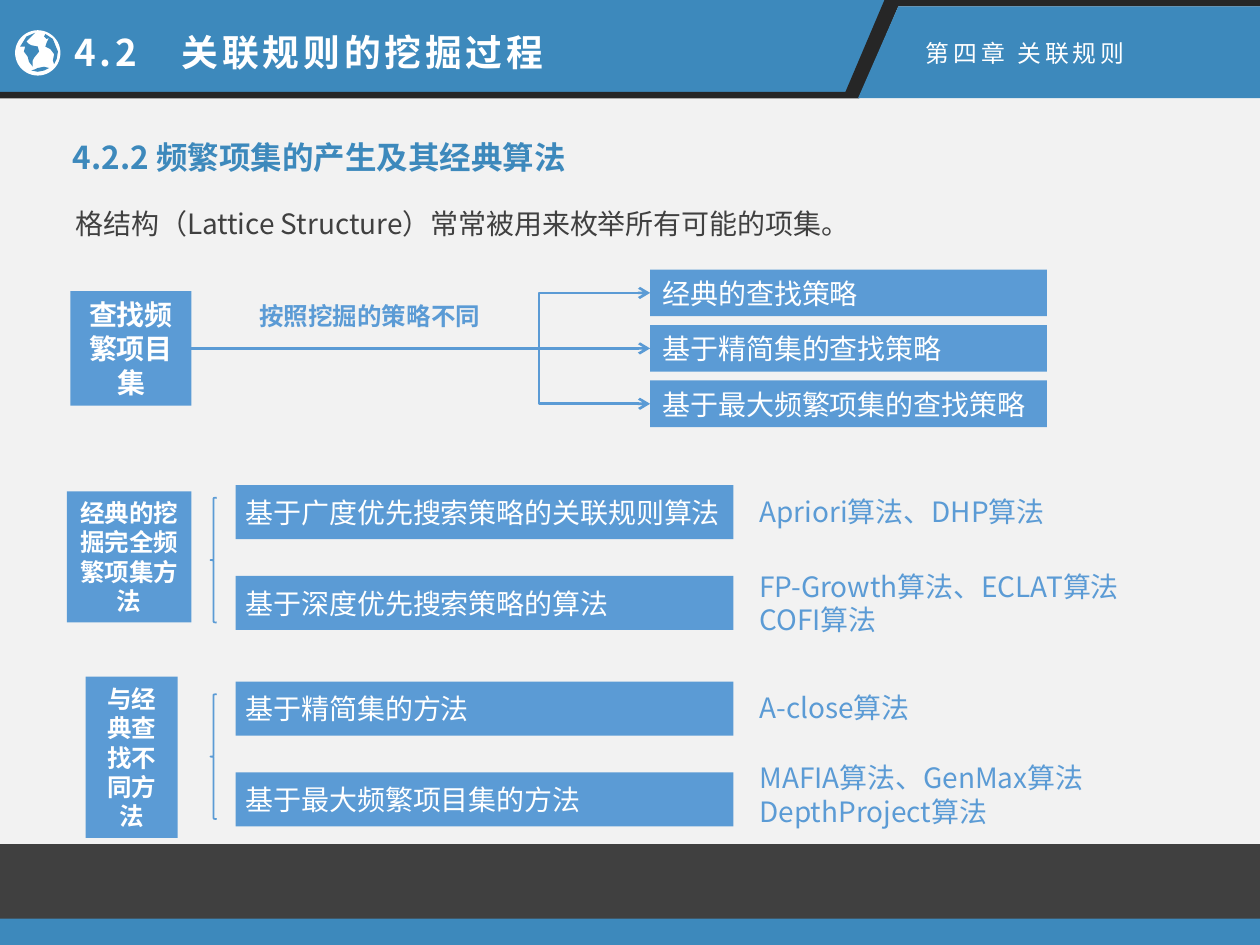
from lxml.etree import SubElement
from pptx import Presentation
from pptx.dml.color import RGBColor
from pptx.enum.shapes import MSO_CONNECTOR as CONN, MSO_SHAPE as SHAPE
from pptx.enum.text import MSO_ANCHOR as ANCHOR, PP_ALIGN as ALIGN
from pptx.oxml.ns import qn
from pptx.util import Inches, Pt

# Grid: 100 columns by 75 rows; outlines use a ten times finer mesh
W, H = Inches(10), Inches(7.5)
COL, ROW = W / 100, H / 75
FINE = COL / 10

HEAD = RGBColor(0x3D, 0x89, 0xBC)
BLUE = RGBColor(0x5B, 0x9B, 0xD5)
DARK = RGBColor(0x40, 0x40, 0x40)
BLACK = RGBColor(0x26, 0x26, 0x26)
WHITE = RGBColor(0xFF, 0xFF, 0xFF)
PAPER = RGBColor(0xF2, 0xF2, 0xF2)
FONT = "Noto Sans CJK SC"

# Text formats
TITLE = dict(size=Pt(21), bold=True)
CHAPTER = dict(size=Pt(13.6))
SECTION = dict(size=Pt(18), bold=True)
BODY = dict(size=Pt(16))
BODY_BOLD = dict(size=Pt(16), bold=True)
SMALL_BOLD = dict(size=Pt(14), bold=True)


def cells(x, y, w, h):
    return [round(v * u) for v, u in zip((x, y, w, h), (COL, ROW, COL, ROW))]


def paint(sp, color):
    sp.shadow.inherit = False
    sp.fill.solid()
    sp.fill.fore_color.rgb = color
    sp.line.fill.background()
    return sp


def write(tf, text, color, fmt, align=ALIGN.LEFT, spacing=None):
    for i, line in enumerate(text.split("\n")):
        p = tf.paragraphs[0] if i == 0 else tf.add_paragraph()
        p.alignment = align
        r = p.add_run()
        r.text = line
        for name, value in dict(fmt, name=FONT).items():
            setattr(r.font, name, value)
        r.font.color.rgb = color
        rpr = r.font._element
        SubElement(rpr, qn("a:ea")).set("typeface", FONT)
        if spacing:
            rpr.set("spc", str(spacing))


def add_block(s, at, color, kind=SHAPE.RECTANGLE):
    return paint(s.shapes.add_shape(kind, *cells(*at)), color)


def add_box(s, at, text, fmt=BODY, align=ALIGN.LEFT, inset=1):
    sp = add_block(s, at, BLUE)
    tf = sp.text_frame
    tf.word_wrap = True
    tf.vertical_anchor = ANCHOR.MIDDLE
    tf.margin_left = tf.margin_right = round(inset * COL)
    write(tf, text, WHITE, fmt, align)
    return sp


def add_label(s, at, text, color=BLUE, fmt=BODY, wrap=True, spacing=None):
    tf = s.shapes.add_textbox(*cells(*at)).text_frame
    tf.word_wrap = wrap
    write(tf, text, color, fmt, spacing=spacing)
    return tf


def add_outline(s, points, color):
    fb = s.shapes.build_freeform(*points[0], scale=FINE)
    fb.add_line_segments(points[1:], close=True)
    return paint(fb.convert_to_shape(), color)


def add_arrow(s, start, end, kind):
    cx = s.shapes.add_connector(kind, 0, 0, 0, 0)
    cx.begin_connect(start, 3)
    cx.end_connect(end, 1)
    cx.line.color.rgb = BLUE
    cx.line.width = Pt(1.5)
    SubElement(cx.line._get_or_add_ln(), qn("a:tailEnd")).set("type", "arrow")
    sppr = cx._element.spPr
    SubElement(sppr, qn("a:effectLst"))
    if kind == CONN.ELBOW:
        guide = SubElement(sppr.find(qn("a:prstGeom")).get_or_add_avLst(), qn("a:gd"))
        guide.set("name", "adj1")
        guide.set("fmla", "val 75800")


def add_brace(s, y):
    sp = s.shapes.add_shape(SHAPE.LEFT_BRACE, *cells(16.7, y, 0.5, 9.9))
    sp.shadow.inherit = False
    sp.fill.background()
    sp.line.color.rgb = BLUE
    sp.line.width = Pt(1)


def add_globe(s):
    add_block(s, (1.2, 2.4, 3.6, 3.6), WHITE, SHAPE.OVAL)
    lands = (
        [(46, 41), (45, 47), (43, 51), (42, 48), (43, 43), (40, 39), (36, 37),
         (37, 34), (39, 30), (37, 31), (35, 29), (36, 27), (42, 31)],
        [(28, 26), (26, 28), (24, 30), (21, 33), (23, 35), (25, 36), (30, 37),
         (31, 41), (27, 46), (26, 48), (26, 53), (23, 49), (22, 45), (19, 41),
         (20, 37), (16, 37), (21, 29)],
        [(25, 56), (28, 55), (30, 54), (35, 53), (39, 54), (35, 56), (30, 57)],
    )
    for land in lands:
        add_outline(s, land, HEAD)


def add_header(s):
    add_outline(s, [(0, 0), (705, 0), (674, 73), (0, 73)], HEAD)
    add_outline(s, [(709, 0), (1000, 0), (1000, 5), (713, 5), (682, 78), (0, 78),
                    (0, 73), (671, 73), (702, 0)], BLACK)
    add_outline(s, [(713, 5), (1000, 5), (1000, 78), (681, 78)], HEAD)
    add_globe(s)
    add_label(s, (4.9, 1.9, 40.1, 8.1), "4.2　关联规则的挖掘过程", WHITE, TITLE, False, 220)
    add_label(s, (72.5, 2.6, 18.9, 8.1), "第四章 关联规则", WHITE, CHAPTER, False, 220)


def add_strategies(s):
    source = add_box(s, (5.6, 23.1, 9.6, 9.1), "查找频繁项目集", BODY_BOLD, ALIGN.CENTER)
    names = ("经典的查找策略", "基于精简集的查找策略", "基于最大频繁项集的查找策略")
    for i, name in enumerate(names):
        target = add_box(s, (51.6, 21.4 + 4.4 * i, 31.5, 3.7), name)
        add_arrow(s, source, target, CONN.STRAIGHT if i == 1 else CONN.ELBOW)
    add_label(s, (19.6, 23.4, 19.7, 3.4), "按照挖掘的策略不同", fmt=SMALL_BOLD, wrap=False)


def add_methods(s, at, heading, top, names):
    add_box(s, at, heading, SMALL_BOLD, ALIGN.CENTER)
    add_brace(s, top + 1)
    for i, name in enumerate(names):
        add_box(s, (18.7, top + 7.2 * i, 39.5, 4.3), name, inset=0.8)


def main():
    prs = Presentation()
    prs.slide_width, prs.slide_height = W, H
    s = prs.slides.add_slide(prs.slide_layouts[6])
    s.background.fill.solid()
    s.background.fill.fore_color.rgb = PAPER

    # Footer bands and header
    add_block(s, (0, 67, 100, 6), DARK)
    add_block(s, (0, 72.9, 100, 2.1), HEAD)
    add_header(s)

    # Section heading and introduction
    add_label(s, (4.8, 10.5, 88.3, 4), "4.2.2 频繁项集的产生及其经典算法", HEAD, SECTION)
    intro = add_label(s, (0, 14.6, 98.8, 4.6),
                      "格结构（Lattice Structure）常常被用来枚举所有可能的项集。", DARK)
    p = intro.paragraphs[0]
    p.line_spacing = 1.5
    p._p.get_or_add_pPr().set("indent", str(round(5 * COL)))

    # Strategy tree and the two method groups
    add_strategies(s)
    add_methods(s, (5.3, 39, 9.9, 10.4), "经典的挖掘完全频繁项集方法", 38.5,
                ("基于广度优先搜索策略的关联规则算法", "基于深度优先搜索策略的算法"))
    add_methods(s, (6.8, 53.7, 7.3, 12.8), "与经典查找不同方法", 54.1,
                ("基于精简集的方法", "基于最大频繁项目集的方法"))

    # Algorithms beside each method
    algorithms = (
        (38.8, 25.4, "Apriori算法、DHP算法", True),
        (44.7, 33.4, "FP-Growth算法、ECLAT算法COFI算法", True),
        (54.3, 14.5, "A-close算法", False),
        (59.9, 30.8, "MAFIA算法、GenMax算法\nDepthProject算法", True),
    )
    for y, w, text, wrap in algorithms:
        add_label(s, (59.3, y, w, 3.7), text, wrap=wrap)

    prs.save("out.pptx")


if __name__ == "__main__":
    main()
